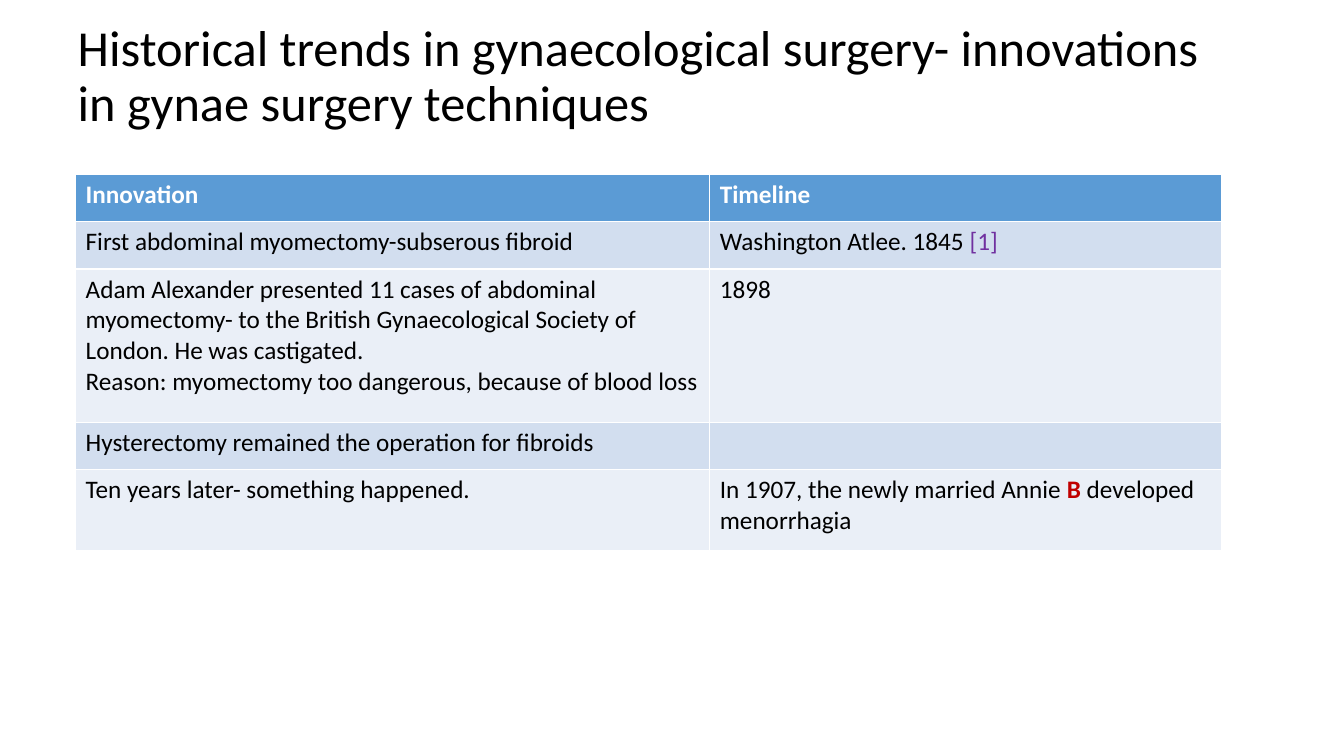
from pptx import Presentation
from pptx.dml.color import RGBColor
from pptx.enum.text import MSO_ANCHOR, MSO_AUTO_SIZE, PP_ALIGN
from pptx.util import Inches, Pt

BLACK, WHITE, PURPLE, RED = "000000", "FFFFFF", "7030A0", "C00000"
HEAD, BANDS = "5B9BD5", ("EAEFF7", "D2DEEF")


def color(code):
    return RGBColor.from_string(code)


def add_run(para, text, size, code=BLACK, bold=False):
    run = para.add_run()
    run.text = text
    for name, value in {"name": "Calibri", "size": Pt(size), "bold": bold}.items():
        setattr(run.font, name, value)
    run.font.color.rgb = color(code)


deck = Presentation()
deck.slide_width, deck.slide_height = Inches(13.33), Inches(7.5)
slide = deck.slides.add_slide(deck.slide_layouts[5])

# Title
title = slide.shapes.title
place = {"left": 0.67, "top": 0.14, "width": 11.37, "height": 1.26}
for name, value in place.items():
    setattr(title, name, Inches(value))
frame = title.text_frame
look = {"word_wrap": True, "auto_size": MSO_AUTO_SIZE.NONE,
        "vertical_anchor": MSO_ANCHOR.MIDDLE}
for name, value in look.items():
    setattr(frame, name, value)
para = frame.paragraphs[0]
para.alignment = PP_ALIGN.LEFT
para.line_spacing = 0.9
add_run(para, "Historical trends in gynaecological surgery- innovations "
        "in gynae surgery techniques", 36)

# Each row: height, then two cells; a cell lists paragraphs, a paragraph lists runs
rows = [
    (0.47, [[("Innovation", WHITE, True)]], [[("Timeline", WHITE, True)]]),
    (0.47, [[("First abdominal myomectomy-subserous fibroid",)]],
     [[("Washington Atlee. 1845 ",), ("[1]", PURPLE)]]),
    (1.52, [[("Adam Alexander presented 11 cases of abdominal myomectomy- to the "
              "British Gynaecological Society of London. He was castigated.",)],
            [("Reason: myomectomy too dangerous, because of blood loss",)]],
     [[("1898",)]]),
    (0.47, [[("Hysterectomy remained the operation for fibroids",)]], []),
    (0.8, [[("Ten years later- something happened.",)]],
     [[("In 1907, the newly married Annie ",), ("B ", RED, True),
       ("developed menorrhagia",)]]),
]

# Table; its built-in style draws the white rules
table = slide.shapes.add_table(len(rows), 2, Inches(0.75), Inches(1.73),
                               Inches(11.37), Inches(3.73)).table
for column, width in zip(table.columns, (6.29, 5.08)):
    column.width = Inches(width)
for r, (height, *cells) in enumerate(rows):
    table.rows[r].height = Inches(height)
    for c, paras in enumerate(cells):
        cell = table.cell(r, c)
        cell.fill.solid()
        cell.fill.fore_color.rgb = color(BANDS[r % 2] if r else HEAD)
        for i, runs in enumerate(paras):
            frame = cell.text_frame
            para = frame.add_paragraph() if i else frame.paragraphs[0]
            for text, *style in runs:
                add_run(para, text, 18, *style)

deck.save("out.pptx")
